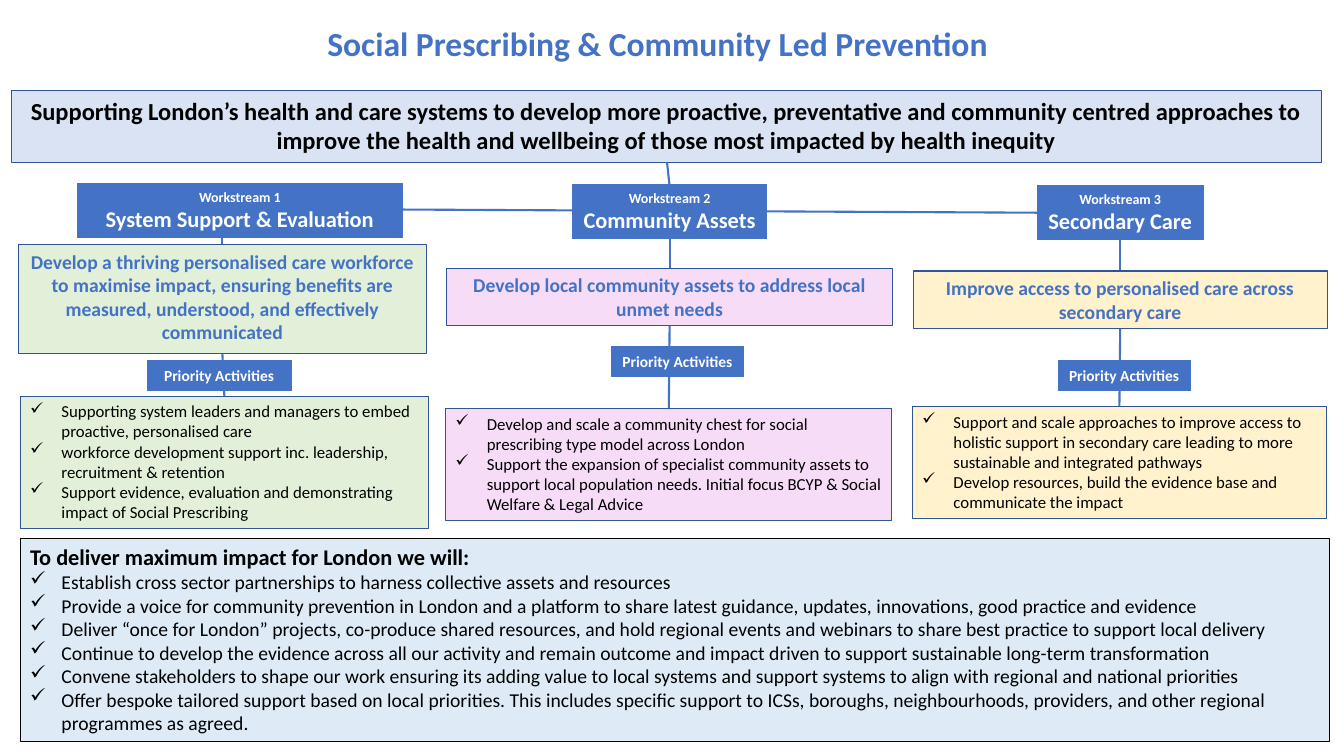
from lxml import etree
from pptx import Presentation
from pptx.dml.color import RGBColor
from pptx.enum.shapes import MSO_CONNECTOR, MSO_SHAPE
from pptx.enum.text import MSO_ANCHOR, MSO_AUTO_SIZE, PP_ALIGN
from pptx.oxml.ns import qn
from pptx.util import Cm, Pt

RECT = MSO_SHAPE.RECTANGLE
LINE = MSO_CONNECTOR.STRAIGHT
TOP = MSO_ANCHOR.TOP
GROW = MSO_AUTO_SIZE.SHAPE_TO_FIT_TEXT
LEFT, MID = PP_ALIGN.LEFT, PP_ALIGN.CENTER
FONT = "Calibri"
BLUE, NAVY, BLACK, WHITE = "4472C4", "2F5597", "000000", "FFFFFF"
HEAD_H, TAG_H = 1.37, 0.74

# Per column: box, head (shift, drop, width), goal and activities (drop, height),
# tag (shift, drop, width); shifts are from the column's centre
STREAMS = [
    dict(box=(0.46, 4.62, 10.29), fill="E2F0D9", name="System Support & Evaluation",
         head=(0.44, 0, 8.18), goal=(1.55, 2.74), tag=(-0.08, 4.47, 3.63),
         acts=(5.36, 3.33), nudge=0.05,
         aim="Develop a thriving personalised care workforce to maximise impact, "
             "ensuring benefits are measured, understood, and effectively communicated",
         tasks=["Supporting system leaders and managers to embed proactive, personalised care",
                "workforce development support inc. leadership, recruitment & retention",
                "Support evidence, evaluation and demonstrating impact of Social Prescribing"]),
    dict(box=(11.25, 4.62, 11.25), fill="F6DCF7", name="Community Assets",
         head=(0, 0.03, 4.9), goal=(2.14, 1.45), tag=(0.2, 4.12, 3.33),
         acts=(5.67, 2.82), nudge=-0.02,
         aim="Develop local community assets to address local unmet needs",
         tasks=["Develop and scale a community chest for social prescribing type model across London",
                "Support the expansion of specialist community assets to support local "
                "population needs. Initial focus BCYP & Social Welfare & Legal Advice"]),
    dict(box=(23.01, 4.62, 10.44), fill="FFF2CC", name="Secondary Care",
         head=(0, 0.05, 4.19), goal=(2.21, 1.45), tag=(0.1, 4.47, 3.33),
         acts=(5.62, 2.82), nudge=-0.02,
         aim="Improve access to personalised care across secondary care",
         tasks=["Support and scale approaches to improve access to holistic support in "
                "secondary care leading to more sustainable and integrated pathways",
                "Develop resources, build the evidence base and communicate the impact"]),
]
PLEDGES = [
    "Establish cross sector partnerships to harness collective assets and resources",
    "Provide a voice for community prevention in London and a platform to share latest "
    "guidance, updates, innovations, good practice and evidence",
    "Deliver “once for London” projects, co-produce shared resources, and hold regional "
    "events and webinars to share best practice to support local delivery",
    "Continue to develop the evidence across all our activity and remain outcome and "
    "impact driven to support sustainable long-term transformation",
    "Convene stakeholders to shape our work ensuring its adding value to local systems "
    "and support systems to align with regional and national priorities",
    "Offer bespoke tailored support based on local priorities. This includes specific "
    "support to ICSs, boroughs, neighbourhoods, providers, and other regional "
    "programmes as agreed.",
]


def paint(code):
    return RGBColor.from_string(code)


def write(frame, rows, color, align=LEFT, wrap=True):
    """Rows are (text, size, bold, tick)."""
    frame.word_wrap = wrap
    frame.auto_size = GROW
    frame.vertical_anchor = TOP
    for i, (text, size, bold, tick) in enumerate(rows):
        para = frame.paragraphs[0] if i == 0 else frame.add_paragraph()
        para.alignment = align
        if tick:
            props = para._p.get_or_add_pPr()
            props.set("marL", str(Cm(0.79)))
            props.set("indent", str(Cm(-0.79)))
            etree.SubElement(props, qn("a:buChar")).set("char", "✓")
        run = para.add_run()
        run.text = text
        font = run.font
        font.name, font.size, font.bold = FONT, Pt(size), bold
        font.color.rgb = paint(color)


def panel(slide, box, fill, edge, rows, color=BLACK, align=LEFT, wrap=True):
    shape = slide.shapes.add_shape(RECT, *map(Cm, box))
    shape.shadow.inherit = False
    shape.fill.solid()
    shape.fill.fore_color.rgb = paint(fill)
    shape.line.color.rgb = paint(edge)
    shape.line.width = Pt(0.75)
    write(shape.text_frame, rows, color, align, wrap)


def link(slide, x1, y1, x2, y2):
    line = slide.shapes.add_connector(LINE, Cm(x1), Cm(y1), Cm(x2), Cm(y2))
    line.line.color.rgb = paint(BLUE)
    line.line.width = Pt(1.5)
    etree.SubElement(line._element.spPr, qn("a:effectLst"))


def title(slide, box):
    area = slide.shapes.add_textbox(*map(Cm, box))
    rows = [("Social Prescribing & Community Led Prevention", 24, True, False)]
    write(area.text_frame, rows, BLUE, wrap=False)
    area.text_frame.paragraphs[0]._p.get_or_add_pPr().set("marL", str(Cm(0.25)))


def banner(slide, box):
    text = ("Supporting London’s health and care systems to develop more proactive, "
            "preventative and community centred approaches to improve the health and "
            "wellbeing of those most impacted by health inequity")
    panel(slide, box, "DAE3F3", NAVY, [(text, 17.5, True, False)], align=MID)


def stream(slide, box, num, item):
    left, top, width = box
    axis = left + width / 2
    goal, goal_h = item["goal"]
    acts, acts_h = item["acts"]

    # Stems behind the boxes
    link(slide, axis, top + HEAD_H, axis, top + goal)
    link(slide, axis, top + goal + goal_h, axis + item["nudge"], top + acts)

    # Goal and activities
    panel(slide, (left, top + goal, width, goal_h), item["fill"], NAVY,
          [(item["aim"], 14, True, False)], BLUE, MID)
    panel(slide, (left + item["nudge"], top + acts, width, acts_h), item["fill"], NAVY,
          [(task, 12, False, True) for task in item["tasks"]])

    # Head and tag
    head = [(f"Workstream {num}", 10, True, False), (item["name"], 16, True, False)]
    tag = [("Priority Activities", 11, True, False)]
    for key, high, rows in (("head", HEAD_H, head), ("tag", TAG_H, tag)):
        shift, drop, wide = item[key]
        panel(slide, (axis + shift - wide / 2, top + drop, wide, high), BLUE, BLUE,
              rows, WHITE, MID, wrap=num == 1)


def pledge(slide, box):
    rows = [("To deliver maximum impact for London we will:", 16, True, False)]
    rows += [(text, 14, False, True) for text in PLEDGES]
    panel(slide, box, "DEEBF7", BLACK, rows)


def main():
    deck = Presentation()
    deck.slide_width, deck.slide_height = Cm(33.87), Cm(19.05)
    slide = deck.slides.add_slide(deck.slide_layouts[6])
    title(slide, (7.75, 0.46, 17.78, 1.27))
    banner(slide, (0.3, 2.29, 33, 1.8))
    # Lines that join the banner and the three heads
    link(slide, 16.81, 4.09, 16.87, 4.65)
    link(slide, 10.13, 5.28, 26.14, 5.36)
    for num, item in enumerate(STREAMS, 1):
        stream(slide, item["box"], num, item)
    pledge(slide, (0.51, 13.56, 33, 5.13))
    deck.save("out.pptx")


if __name__ == "__main__":
    main()
